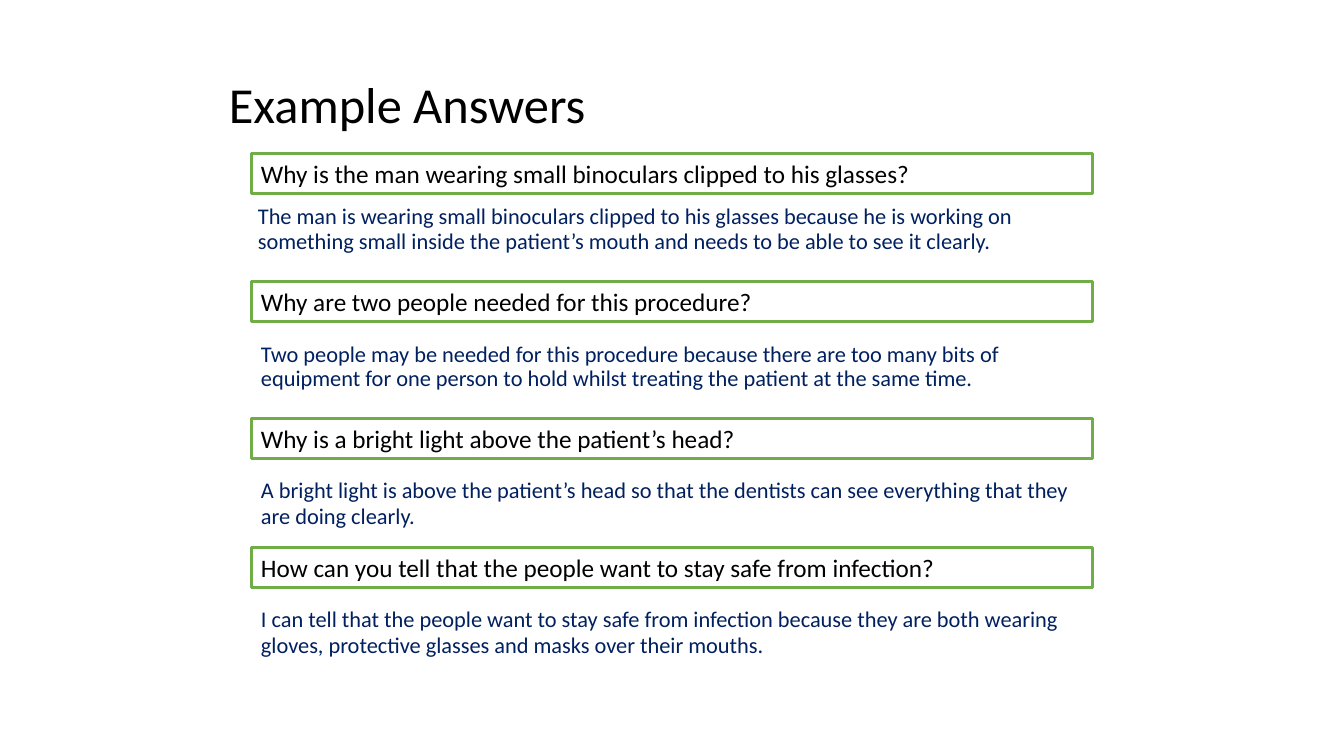
from dataclasses import dataclass

from pptx import Presentation
from pptx.dml.color import RGBColor as RGB
from pptx.enum.shapes import MSO_SHAPE as Shape
from pptx.enum.text import MSO_ANCHOR as Anchor, MSO_AUTO_SIZE as Fit, PP_ALIGN as Align
from pptx.util import Inches, Pt


@dataclass(frozen=True)
class Theme:
    font: str = "Calibri"
    ink: str = "000000"
    navy: str = "002060"
    green: str = "70AD47"
    head: int = 36
    ask: int = 18
    reply: int = 16
    rule: float = 2.25


class Page:
    def __init__(self, deck, theme):
        self.deck, self.theme = deck, theme
        self.slide = deck.slides.add_slide(deck.slide_layouts[5])

    def area(self, left, top, width, height):
        """Turn percentages of the slide's size into lengths."""
        wide, high = self.deck.slide_width, self.deck.slide_height
        return [round(part * size / 100) for part, size in
                zip((left, top, width, height), (wide, high, wide, high))]

    def label(self, shape, text, size, color, anchor, fit=Fit.NONE, tight=False, gap=0):
        frame = shape.text_frame
        frame.word_wrap = True
        frame.auto_size = fit
        frame.vertical_anchor = anchor
        para = frame.paragraphs[0]
        para.alignment = Align.LEFT
        para.line_spacing = 0.9 if tight else 1.0
        para.space_before = Pt(gap)
        run = para.add_run()
        run.text = text
        run.font.name = self.theme.font
        run.font.size = Pt(size)
        run.font.color.rgb = RGB.from_string(color)

    def title(self, text, *box):
        shape = self.slide.shapes.title
        shape.left, shape.top, shape.width, shape.height = self.area(*box)
        self.label(shape, text, self.theme.head, self.theme.ink, Anchor.MIDDLE, tight=True)

    def ask(self, text, *box):
        shape = self.slide.shapes.add_shape(Shape.RECTANGLE, *self.area(*box))
        shape.shadow.inherit = False
        shape.fill.background()
        shape.line.color.rgb = RGB.from_string(self.theme.green)
        shape.line.width = Pt(self.theme.rule)
        self.label(shape, text, self.theme.ask, self.theme.ink, Anchor.MIDDLE)

    def reply(self, text, *box, tight):
        shape = self.slide.shapes.add_textbox(*self.area(*box))
        self.label(shape, text, self.theme.reply, self.theme.navy, Anchor.TOP,
                   Fit.SHAPE_TO_FIT_TEXT, tight, 10 if tight else 0)


LEFT, WIDTH, BAR = 18.68, 62.63, 5.33

# Question, its top; answer, its left, top and width; tight line spacing
PAIRS = [
    ("Why is the man wearing small binoculars clipped to his glasses?", 20.27,
     "The man is wearing small binoculars clipped to his glasses because he is working on "
     "something small inside the patient’s mouth and needs to be able to see it clearly.",
     18.45, 26.53, 63.68, True),
    ("Why are two people needed for this procedure?", 37.2,
     "Two people may be needed for this procedure because there are too many bits of "
     "equipment for one person to hold whilst treating the patient at the same time.",
     LEFT, 44.67, WIDTH, True),
    ("Why is a bright light above the patient’s head?", 55.33,
     "A bright light is above the patient’s head so that the dentists can see everything "
     "that they are doing clearly.",
     LEFT, 62.27, WIDTH, False),
    ("How can you tell that the people want to stay safe from infection?", 72.4,
     "I can tell that the people want to stay safe from infection because they are both "
     "wearing gloves, protective glasses and masks over their mouths.",
     LEFT, 79.33, WIDTH, False),
]


def main():
    deck = Presentation()
    deck.slide_width, deck.slide_height = Inches(13.33), Inches(7.5)
    page = Page(deck, Theme())
    page.title("Example Answers", 16.28, 6.93, 67.44, 14.53)
    for ask, top, *_ in PAIRS:
        page.ask(ask, LEFT, top, WIDTH, BAR)
    for _, _, reply, left, top, width, tight in PAIRS:
        page.reply(reply, left, top, width, 7.87 if tight else 8.53, tight=tight)
    deck.save("out.pptx")


if __name__ == "__main__":
    main()
